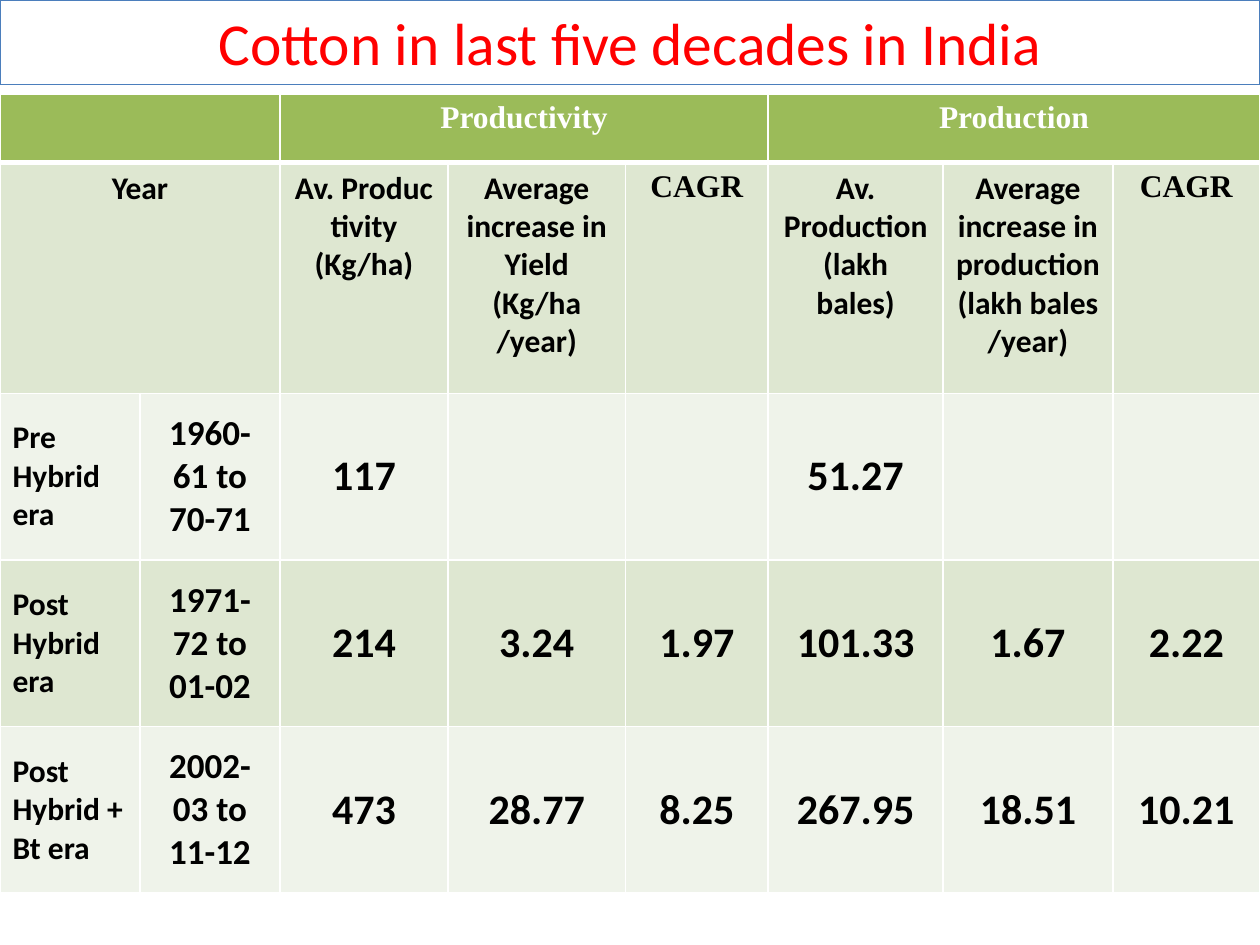
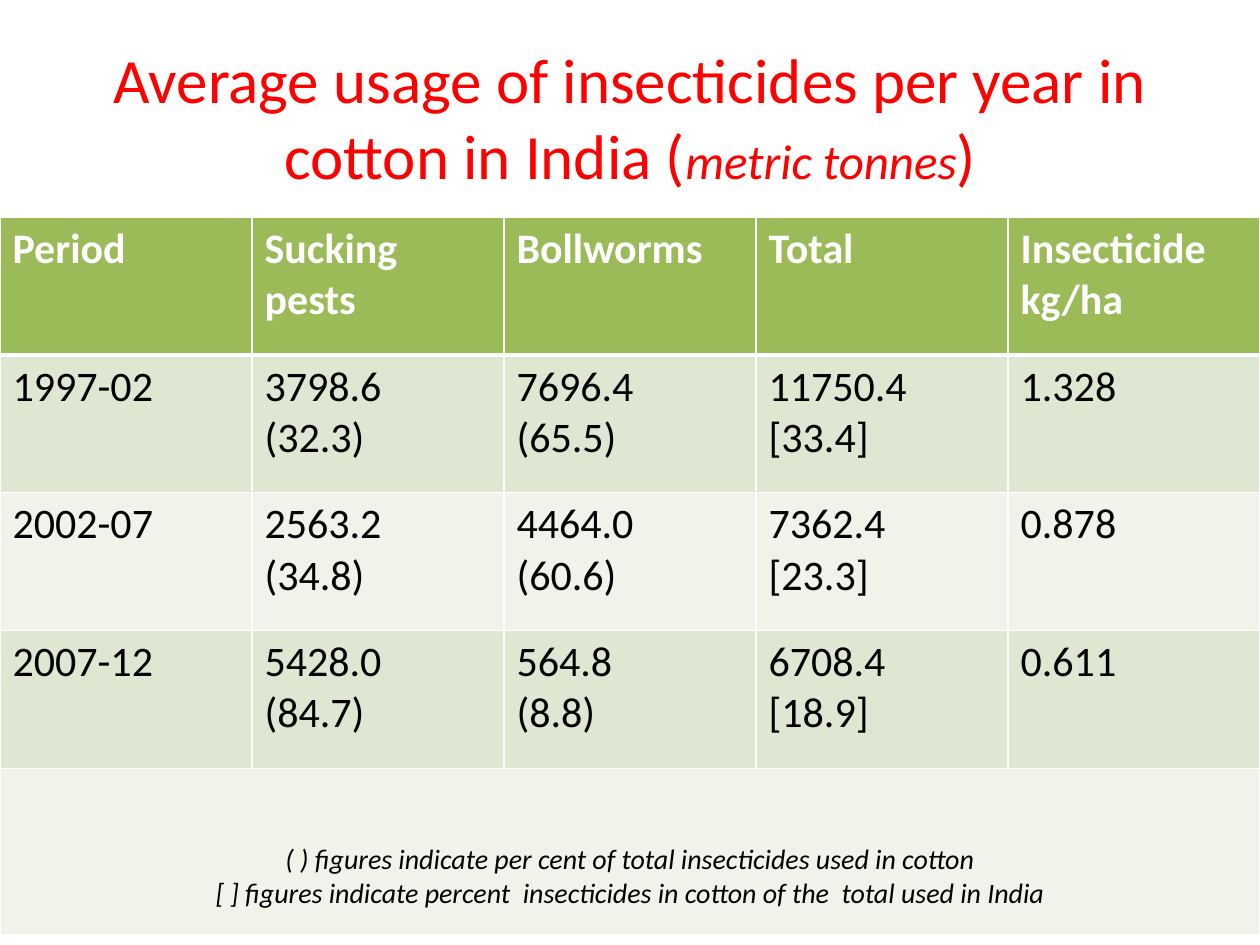
from dataclasses import dataclass

from lxml import etree
from pptx import Presentation
from pptx.dml.color import RGBColor
from pptx.enum.shapes import MSO_SHAPE
from pptx.enum.text import MSO_ANCHOR, PP_ALIGN
from pptx.oxml.ns import qn
from pptx.util import Pt

RECT = MSO_SHAPE.RECTANGLE
MID, TOP = MSO_ANCHOR.MIDDLE, MSO_ANCHOR.TOP
LEFT, MIDST = PP_ALIGN.LEFT, PP_ALIGN.CENTER


@dataclass(frozen=True)
class Theme:
    sans: str = "Calibri"
    serif: str = "Times New Roman"
    red: str = "FF0000"
    black: str = "000000"
    white: str = "FFFFFF"
    blue: str = "4B7EBC"
    head: str = "9BBB59"
    bands: tuple = ("DEE7D1", "EFF3EA")
    title: int = 34
    wide: int = 36
    unit: int = 28
    big: int = 24
    mid: int = 20
    base: int = 18
    note: int = 16
    thin: float = 1
    thick: float = 3


T = Theme()


def tint(code):
    return RGBColor.from_string(code)


def write(frame, text, size=T.base, font=T.sans, color=T.black, bold=False,
          slant=False, align=LEFT):
    lines = text.split("\n") if isinstance(text, str) else [text]
    for num, line in enumerate(lines):
        para = frame.add_paragraph() if num else frame.paragraphs[0]
        para.alignment = align
        parts = [(line, {})] if isinstance(line, str) else line
        for words, style in parts:
            run = para.add_run()
            run.text = words
            run.font.size = Pt(style.get("size", size))
            run.font.name = font
            run.font.bold = bold
            run.font.italic = style.get("slant", slant)
            run.font.color.rgb = tint(color)


def edge(cell, side, width):
    line = etree.SubElement(cell._tc.get_or_add_tcPr(), qn("a:ln" + side))
    line.set("w", str(Pt(width)))
    fill = etree.SubElement(line, qn("a:solidFill"))
    etree.SubElement(fill, qn("a:srgbClr")).set("val", T.white)


def grid(slide, box, cols, rows, spans):
    frame = slide.shapes.add_table(len(rows), len(cols), *map(Pt, box))
    table = frame.table
    table.first_row = table.horz_banding = False
    for col, width in zip(table.columns, cols):
        col.width = Pt(width)
    for num, (row, height) in enumerate(zip(table.rows, rows)):
        row.height = Pt(height)
        for cell in row.cells:
            for side in "LRTB":
                seam = (num, side) in ((0, "B"), (1, "T"))
                edge(cell, side, T.thick if seam else T.thin)
            cell.fill.solid()
            shade = T.bands[(num - 1) % 2] if num else T.head
            cell.fill.fore_color.rgb = tint(shade)
    for row, start, end in spans:
        table.cell(row, start).merge(table.cell(row, end))
    return table


def enter(table, row, col, text, anchor=TOP, **style):
    cell = table.cell(row, col)
    cell.vertical_anchor = anchor
    write(cell.text_frame, text, **style)


def title(slide, box, text, size, line=None):
    shape = slide.shapes.add_shape(RECT, *map(Pt, box))
    shape.shadow.inherit = False
    shape.fill.background()
    if line:
        shape.line.color.rgb = tint(line)
        shape.line.width = Pt(0.75)
    else:
        shape.line.fill.background()
    frame = shape.text_frame
    frame.word_wrap = True
    frame.vertical_anchor = MID
    write(frame, text, size=size, color=T.red, align=MIDST)


def yields(slide, box):
    left, top, width, height = box
    title(slide, (left, top, width, 48.2),
          "Cotton in last five decades in India", T.title, T.blue)
    cols = (80, 80, 96, 101.5, 81.5, 100, 97, 84)
    rows = (39, 131.8, 95.2, 95.2, 95.2)
    table = grid(slide, (left, top + 54, width, sum(rows)), cols, rows,
                 ((0, 0, 1), (0, 2, 4), (0, 5, 7), (1, 0, 1)))
    for col, text in ((2, "Productivity"), (5, "Production")):
        enter(table, 0, col, text, font=T.serif, color=T.white, bold=True,
              align=MIDST)
    heads = {
        0: "Year",
        2: "Av. Produc tivity\n(Kg/ha)",
        3: "Average increase in Yield (Kg/ha /year)",
        4: "CAGR",
        5: "Av. Production\n(lakh bales)",
        6: "Average increase in production (lakh bales /year)",
        7: "CAGR",
    }
    for col, text in heads.items():
        font = T.serif if text == "CAGR" else T.sans
        enter(table, 1, col, text, font=font, bold=True, align=MIDST)
    eras = (
        ("Pre Hybrid era", "1960-61 to 70-71", "117", "", "", "51.27", "", ""),
        ("Post Hybrid era", "1971-72 to 01-02", "214", "3.24", "1.97",
         "101.33", "1.67", "2.22"),
        ("Post Hybrid + Bt era", "2002-03 to 11-12", "473", "28.77", "8.25",
         "267.95", "18.51", "10.21"),
    )
    sizes = (T.base, T.mid) + (T.big,) * 6
    for row, era in enumerate(eras, 2):
        for col, (text, size) in enumerate(zip(era, sizes)):
            if text:
                enter(table, row, col, text, MID, size=size, bold=True,
                      align=MIDST if col else LEFT)


def usage(slide, box):
    left, top, width, height = box
    parts = (("Average usage of insecticides per year in cotton in India (", {}),
             ("metric tonnes", {"size": T.unit, "slant": True}), (")", {}))
    title(slide, (left + 36, top + 21.6, width - 72, 90), parts, T.wide)
    cols = (width / 5,) * 5
    rows = (78.8,) * 4 + (95.2,)
    table = grid(slide, (left, top + 124, width, sum(rows)), cols, rows,
                 ((4, 0, 4),))
    data = (
        ("Period", "Sucking pests", "Bollworms", "Total", "Insecticide kg/ha"),
        ("1997-02", "3798.6\n(32.3)", "7696.4\n(65.5)", "11750.4\n[33.4]", "1.328"),
        ("2002-07", "2563.2\n(34.8)", "4464.0\n(60.6)", "7362.4\n[23.3]", "0.878"),
        ("2007-12", "5428.0\n(84.7)", "564.8\n(8.8)", "6708.4\n[18.9]", "0.611"),
    )
    for row, texts in enumerate(data):
        for col, text in enumerate(texts):
            enter(table, row, col, text, size=T.big, bold=row == 0,
                  color=T.black if row else T.white)
    table.cell(4, 0).margin_top = Pt(42.6)
    enter(table, 4, 0,
          "( ) figures indicate per cent of total insecticides used in cotton\n"
          "[ ] figures indicate percent  insecticides in cotton of the  total used in India",
          size=T.note, slant=True, align=MIDST)


def main():
    deck = Presentation()
    deck.slide_width, deck.slide_height = Pt(720), Pt(540)
    for build in (yields, usage):
        build(deck.slides.add_slide(deck.slide_layouts[6]), (0, 0, 720, 540))
    deck.save("out.pptx")


if __name__ == "__main__":
    main()
